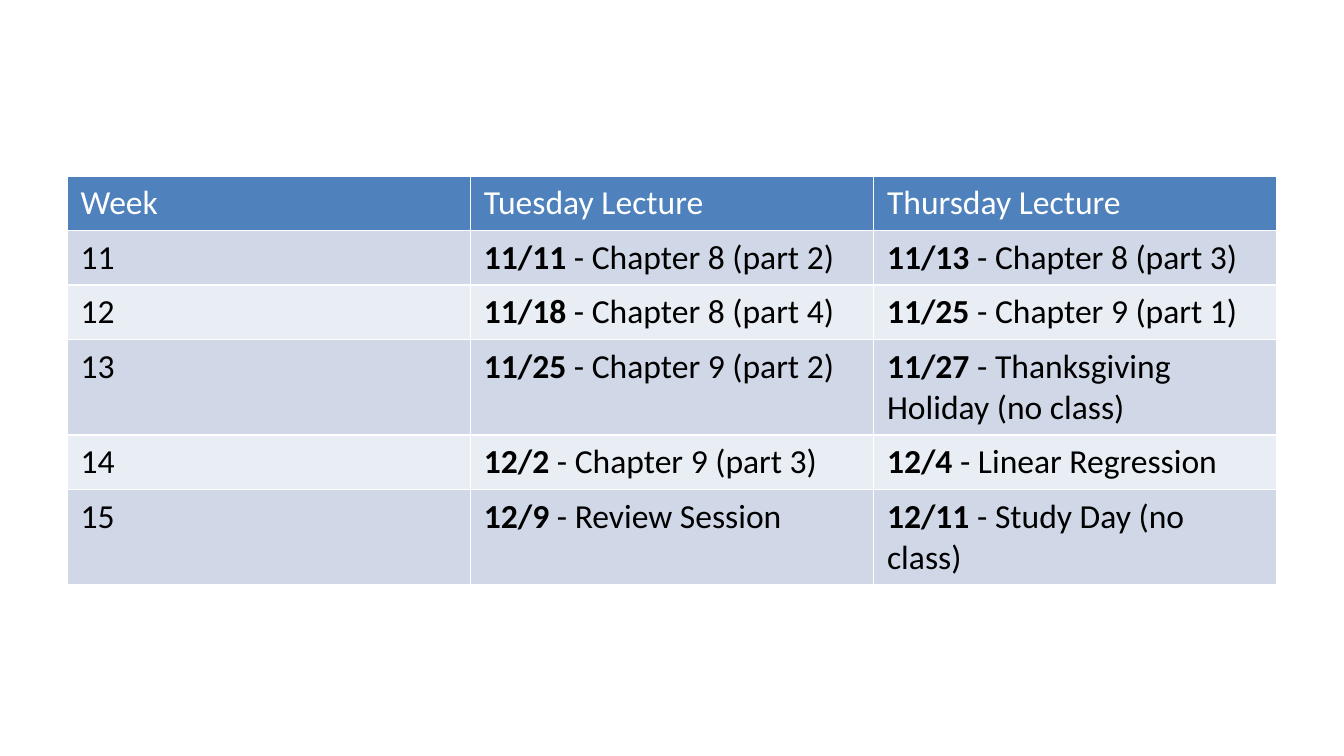
"""Build a slide with the lecture schedule for weeks 11 to 15."""
from typing import NamedTuple

import pptx
import pptx.dml.color
import pptx.util

Cm = pptx.util.Cm
RGBColor = pptx.dml.color.RGBColor

WHITE = RGBColor(0xFF, 0xFF, 0xFF)
BLACK = RGBColor(0x00, 0x00, 0x00)
BLUE = RGBColor(0x4F, 0x81, 0xBD)
BANDS = (RGBColor(0xD0, 0xD8, 0xE8), RGBColor(0xE9, 0xED, 0xF4))


class Talk(NamedTuple):
    date: str
    topic: str


class Week(NamedTuple):
    num: int
    tue: Talk
    thu: Talk


HEADS = ("Week", "Tuesday Lecture", "Thursday Lecture")
WEEKS = (
    Week(11, Talk("11/11", "Chapter 8 (part 2)"), Talk("11/13", "Chapter 8 (part 3)")),
    Week(12, Talk("11/18", "Chapter 8 (part 4)"), Talk("11/25", "Chapter 9 (part 1)")),
    Week(13, Talk("11/25", "Chapter 9 (part 2)"),
         Talk("11/27", "Thanksgiving Holiday (no class)")),
    Week(14, Talk("12/2", "Chapter 9 (part 3)"), Talk("12/4", "Linear Regression")),
    Week(15, Talk("12/9", "Review Session"), Talk("12/11", "Study Day (no class)")),
)


def write(cell, text: str, *, color: RGBColor = BLACK, bold: bool = False,
          size: float = 18, face: str = "Calibri") -> None:
    """Add one formatted run to the first paragraph of a cell."""
    run = cell.text_frame.paragraphs[0].add_run()
    run.text = text
    run.font.name = face
    run.font.size = pptx.util.Pt(size)
    run.font.bold = bold
    run.font.color.rgb = color


def paint(cell, color: RGBColor) -> None:
    """Fill a cell with one colour."""
    cell.fill.solid()
    cell.fill.fore_color.rgb = color


def draw_week(table, row: int, week: Week) -> None:
    """Fill one row with a week's number and its two lectures."""
    write(table.cell(row, 0), str(week.num))
    for col, talk in enumerate((week.tue, week.thu), 1):
        write(table.cell(row, col), talk.date, bold=True)
        write(table.cell(row, col), f" - {talk.topic}")
    for col in range(len(HEADS)):
        paint(table.cell(row, col), BANDS[(row - 1) % 2])


def main() -> None:
    """Build and save the slide."""
    deck = pptx.Presentation()
    deck.slide_width, deck.slide_height = Cm(25.4), Cm(14.29)
    slide = deck.slides.add_slide(deck.slide_layouts[6])
    table = slide.shapes.add_table(len(WEEKS) + 1, len(HEADS), Cm(1.27), Cm(3.33),
                                   Cm(22.86), Cm(5.51)).table
    for col, head in enumerate(HEADS):
        write(table.cell(0, col), head, color=WHITE)
        paint(table.cell(0, col), BLUE)
    for row, week in enumerate(WEEKS, 1):
        draw_week(table, row, week)
    deck.save("out.pptx")


if __name__ == "__main__":
    main()
